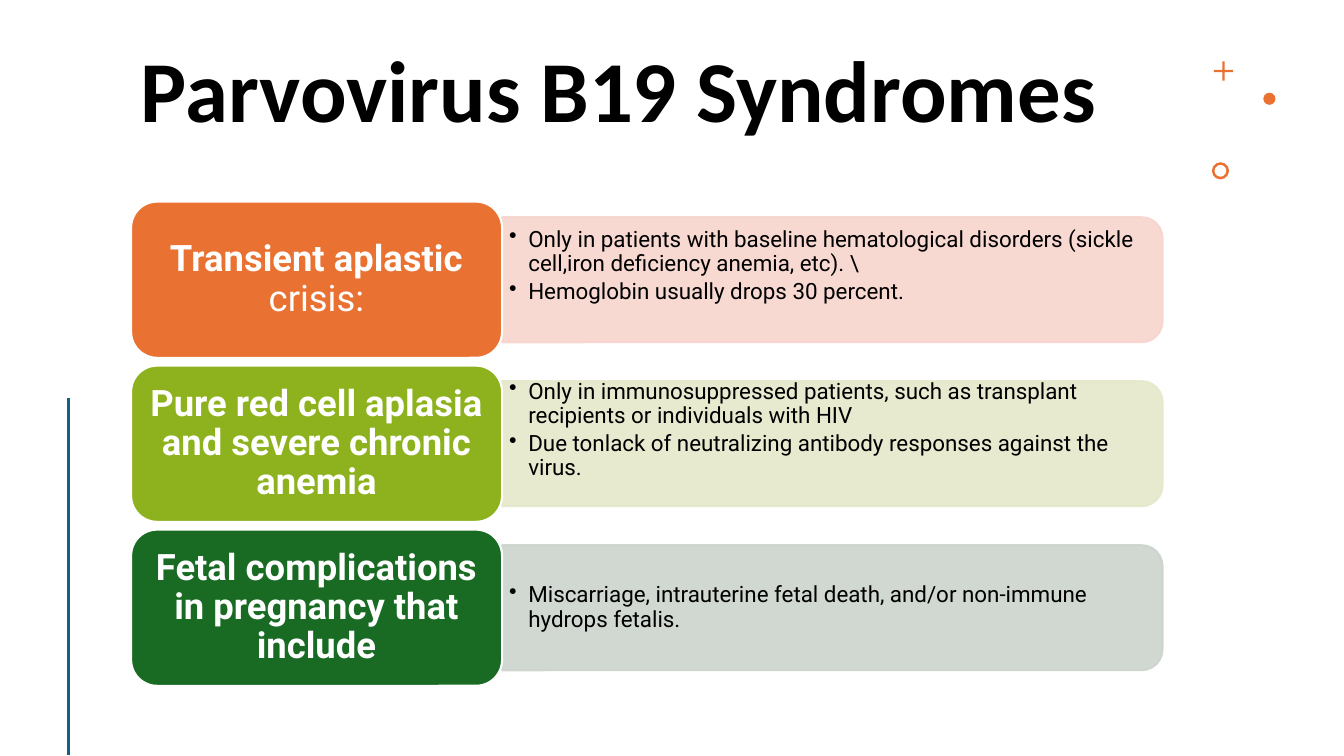
from dataclasses import dataclass
from lxml.etree import SubElement
from pptx import Presentation
from pptx.dml.color import RGBColor
from pptx.enum.shapes import MSO_CONNECTOR, MSO_SHAPE
from pptx.enum.text import MSO_ANCHOR, PP_ALIGN
from pptx.oxml.ns import qn
from pptx.util import Inches, Pt

CELL = 0.1
ORANGE, BLUE, BLACK, WHITE = "E97132", "156082", "000000", "FFFFFF"


def cells(*counts):
    return [Inches(count * CELL) for count in counts]


def color(code):
    return RGBColor.from_string(code)


@dataclass
class Page:
    slide: object
    body_font: str = "Roboto"
    title_font: str = "Calibri"

    def shape(self, preset, area, fill, line=None, adjustment=None, opacity=None):
        shape = self.slide.shapes.add_shape(preset, *cells(*area))
        shape.shadow.inherit = False
        shape.fill.solid()
        shape.fill.fore_color.rgb = color(fill)
        if line:
            shape.line.color.rgb = color(line)
            shape.line.width = Pt(1.5)
        else:
            shape.line.fill.background()
        if adjustment is not None:
            shape.adjustments[0] = adjustment
        if opacity:
            for tint in shape.element.spPr.iter(qn("a:srgbClr")):
                SubElement(tint, qn("a:alpha"), val=str(opacity * 1000))
        return shape

    def frame(self, shape, insets, anchor):
        frame = shape.text_frame
        frame.word_wrap = True
        frame.vertical_anchor = anchor
        (frame.margin_left, frame.margin_top,
         frame.margin_right, frame.margin_bottom) = cells(*insets)
        return frame

    def fill_para(self, para, spans, font, size, ink, bold=False, after=0):
        para.line_spacing = 0.9
        para.space_after = Pt(after)
        para.font.name, para.font.size = font, Pt(size)
        para.font.color.rgb = color(ink)
        para.font.bold = bold
        for text, regular in spans:
            span = para.add_run()
            span.text = text
            if regular:
                span.font.bold = False

    def title(self, text, area):
        box = self.slide.shapes.add_textbox(*cells(*area))
        frame = self.frame(box, (1, 0.5, 1, 0.5), MSO_ANCHOR.TOP)
        self.fill_para(frame.paragraphs[0], [(text, False)], self.title_font, 62, BLACK, True)

    def heading(self, spans, area, fill):
        card = self.shape(MSO_SHAPE.ROUNDED_RECTANGLE, area, fill, WHITE)
        frame = self.frame(card, (1.1, 0.5, 1.1, 0.5), MSO_ANCHOR.MIDDLE)
        para = frame.paragraphs[0]
        para.alignment = PP_ALIGN.CENTER
        self.fill_para(para, spans, self.body_font, 26, WHITE, True)

    def panel(self, area, fill):
        left, top, width, height = area
        upright = (left + (width - height) / 2, top + (height - width) / 2, height, width)
        shape = self.shape(MSO_SHAPE.ROUND_2_SAME_RECTANGLE, upright, fill, fill, opacity=90)
        shape.rotation = 90

    def bullets(self, items, area, bottom):
        box = self.slide.shapes.add_textbox(*cells(*area))
        frame = self.frame(box, (0.7, 0.3, 0.7, bottom), MSO_ANCHOR.MIDDLE)
        for index, item in enumerate(items):
            para = frame.add_paragraph() if index else frame.paragraphs[0]
            self.fill_para(para, [(item, False)], self.body_font, 16, BLACK, after=2.9)
            properties = para._p.get_or_add_pPr()
            indent = Inches(0.19)
            properties.set("marL", str(indent))
            properties.set("indent", str(-indent))
            bullet = SubElement(properties, qn("a:buChar"), char="•")
            properties.find(qn("a:defRPr")).addprevious(bullet)

    def line(self, start, end, ink):
        line = self.slide.shapes.add_connector(MSO_CONNECTOR.STRAIGHT, *cells(*start, *end))
        line.line.color.rgb = color(ink)
        line.line.width = Pt(2)
        SubElement(line._element.spPr, qn("a:effectLst"))


SYNDROMES = [
    ([("Transient aplastic ", False), ("crisis:", True)], ORANGE, "F7D5CE", 3,
     ["Only in patients with baseline hematological disorders "
      "(sickle cell,iron deficiency anemia, etc). \\",
      "Hemoglobin usually drops 30 percent."]),
    ([("Pure red cell aplasia and severe chronic anemia", False)], "8EB21E", "E5E8CA", 3,
     ["Only in immunosuppressed patients, such as transplant recipients "
      "or individuals with HIV",
      "Due tonlack of neutralizing antibody responses against the virus."]),
    ([("Fetal complications in pregnancy that include", False)], "196B24", "CCD4CD", 0.3,
     ["Miscarriage, intrauterine fetal death, and/or non-immune hydrops fetalis."]),
]


def main():
    deck = Presentation()
    deck.slide_width, deck.slide_height = Inches(13.33), Inches(7.5)
    page = Page(deck.slides.add_slide(deck.slide_layouts[6]))

    page.title("Parvovirus B19 Syndromes", (13, 4.2, 102.3, 13.1))
    page.shape(MSO_SHAPE.CROSS, (120.4, 6.1, 1.9, 1.9), ORANGE, adjustment=0.44)
    page.shape(MSO_SHAPE.OVAL, (125.3, 9.2, 1.2, 1.2), ORANGE)
    page.shape(MSO_SHAPE.DONUT, (120.2, 16.1, 1.7, 1.7), ORANGE, adjustment=0.15)
    page.line((6.8, 39.5), (6.8, 74.9), BLUE)

    for row, (heading, dark, light, bottom, items) in enumerate(SYNDROMES):
        top = 20 + row * 16.27
        page.panel((49.8, top + 1.55, 65.5, 12.4), light)
        page.bullets(items, (49.8, top + 2.15, 64.9, 11.2), bottom)
        page.heading(heading, (13, top, 36.8, 15.5), dark)

    deck.save("out.pptx")


if __name__ == "__main__":
    main()
